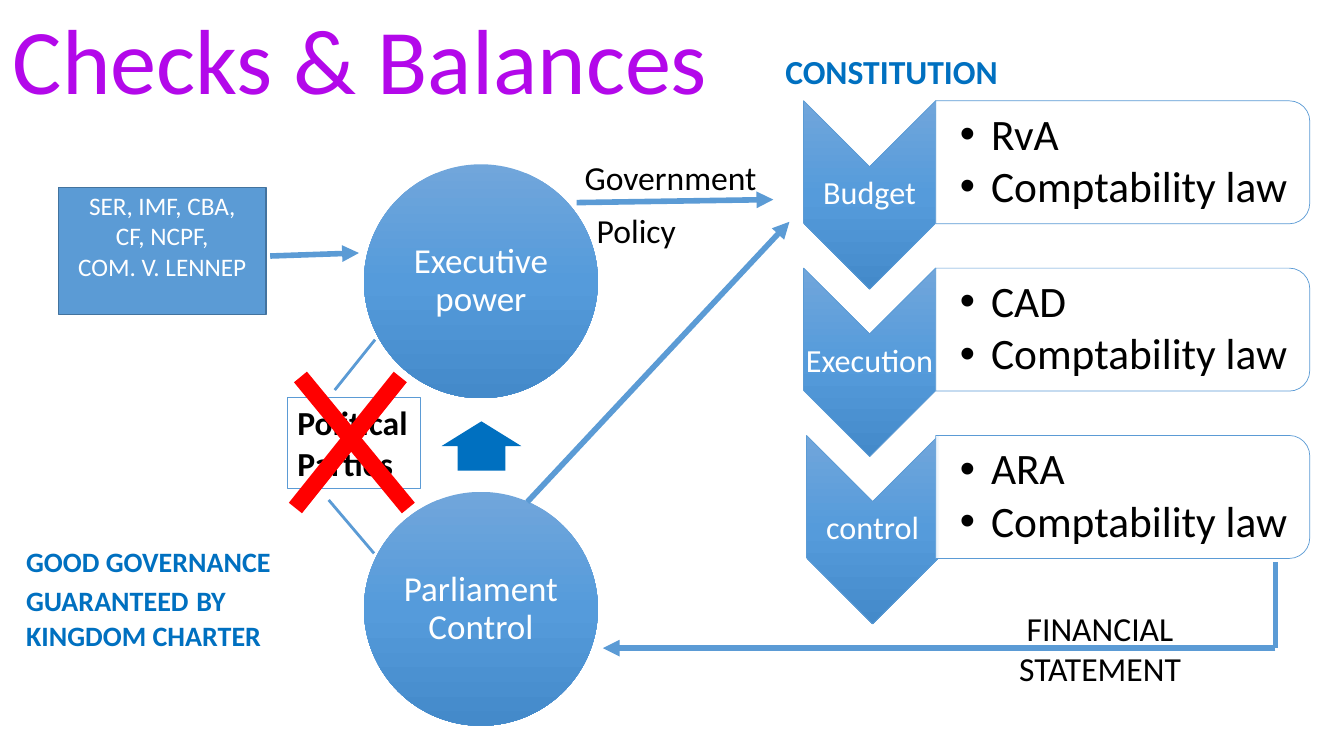
from copy import deepcopy
from dataclasses import dataclass
from typing import NamedTuple

from lxml import etree
from pptx import Presentation
from pptx.dml.color import RGBColor
from pptx.enum.shapes import MSO_CONNECTOR as Link, MSO_SHAPE as Form
from pptx.enum.text import MSO_ANCHOR as Anchor, PP_ALIGN as Align
from pptx.oxml.ns import qn
from pptx.util import Pt

SCALE = 9144  # EMU per px, 100 px to the inch


@dataclass(frozen=True)
class Theme:
    font: str = "Calibri"
    purple: str = "B308EA"
    blue: str = "5B9BD5"
    edge: str = "43739E"
    strong: str = "0070C0"
    red: str = "FF0000"
    white: str = "FFFFFF"
    black: str = "000000"
    gradient: tuple = ("71A6DB", "559BDB", "448ACA")
    title: int = 66
    bullet: int = 31
    power: int = 25
    label: int = 24
    stage: int = 23
    charter: int = 20
    advice: int = 18


THEME = Theme()


class Box(NamedTuple):
    left: int
    top: int
    width: int
    height: int

    def inner(self, x, y, width, height):
        return Box(self.left + x, self.top + y, width, height)

    def emu(self):
        return [round(value * SCALE) for value in self]


def write(shape, lines, size, color, bold=False, align=Align.LEFT,
          anchor=Anchor.TOP, insets=(10, 5, 10, 5), spacing=None):
    """Each line is a string or a list of (text, size) runs."""
    frame = shape.text_frame
    frame.word_wrap = True
    frame.vertical_anchor = anchor
    (frame.margin_left, frame.margin_top,
     frame.margin_right, frame.margin_bottom) = [inset * SCALE for inset in insets]
    for index, line in enumerate(lines):
        para = frame.paragraphs[0] if index == 0 else frame.add_paragraph()
        para.alignment = align
        if spacing:
            para.line_spacing = spacing
        for text, points in [(line, size)] if isinstance(line, str) else line:
            span = para.add_run()
            span.text = text
            span.font.name = THEME.font
            span.font.size = Pt(points)
            span.font.bold = bold
            span.font.color.rgb = RGBColor.from_string(color)
    return frame


def add_text(page, box, lines, size, color, **style):
    return write(page.shapes.add_textbox(*box.emu()), lines, size, color, **style)


def add_form(page, form, box, fill=None, line=None, weight=1, turned=False):
    """Place a shape so that it fills the box, even when turned by 90 degrees."""
    if turned:
        shift = (box.width - box.height) / 2
        box = Box(box.left + shift, box.top - shift, box.height, box.width)
    shape = page.shapes.add_shape(form, *box.emu())
    shape.rotation = 90 if turned else 0
    shape.shadow.inherit = False
    if fill:
        shape.fill.solid()
        shape.fill.fore_color.rgb = RGBColor.from_string(fill)
    else:
        shape.fill.background()
    if line:
        shape.line.color.rgb = RGBColor.from_string(line)
        shape.line.width = Pt(weight)
    else:
        shape.line.fill.background()
    return shape


def shade(shape):
    """Three-stop gradient running straight down the page."""
    shape.fill.gradient()
    shape.fill.gradient_angle = 270
    first = shape._element.spPr.find(".//" + qn("a:gs"))
    first.addnext(deepcopy(first))
    for stop, position, color in zip(shape.fill.gradient_stops, (0, 0.5, 1), THEME.gradient):
        stop.position = position
        stop.color.rgb = RGBColor.from_string(color)
    shape._element.spPr.find(qn("a:gradFill")).set("rotWithShape", "0")


def add_line(page, box, start, end, color=THEME.blue, weight=4, arrow=False):
    points = [(box.left + x, box.top + y) for x, y in (start, end)]
    line = page.shapes.add_connector(
        Link.STRAIGHT, *[value * SCALE for point in points for value in point])
    line.line.color.rgb = RGBColor.from_string(color)
    line.line.width = Pt(weight)
    if arrow:
        etree.SubElement(line.get_or_add_ln(), qn("a:tailEnd"), type="triangle")
    etree.SubElement(line._element.spPr, qn("a:effectLst"))


def add_stage(page, box, name, duties, shift=0):
    """Chevron with its step name, and a panel of bullets beside it."""
    chevron = add_form(page, Form.CHEVRON, box.inner(shift, 0, 131, 187),
                       line=THEME.blue, weight=0.5, turned=True)
    shade(chevron)
    add_text(page, box.inner(shift, 65, 131, 56), [name], THEME.stage, THEME.white,
             align=Align.CENTER, anchor=Anchor.MIDDLE, insets=(2, 2, 2, 2), spacing=0.9)
    panel = add_form(page, Form.ROUND_2_SAME_RECTANGLE, box.inner(131, 0, 371, 122),
                     THEME.white, THEME.blue, 0.5, turned=True)
    color = panel._element.spPr.find(qn("a:solidFill"))[0]
    etree.SubElement(color, qn("a:alpha"), val="90000")
    frame = add_text(page, box.inner(131, 6, 365, 110), duties, THEME.bullet, THEME.black,
                     anchor=Anchor.MIDDLE, insets=(24, 2, 2, 2), spacing=0.9)
    for index, para in enumerate(frame.paragraphs):
        if index:
            para.space_before = Pt(4)
        marks = para._p.get_or_add_pPr()
        marks.set("marL", str(31 * SCALE))
        marks.set("indent", str(-31 * SCALE))
        etree.SubElement(marks, qn("a:buFont"), typeface="Arial")
        etree.SubElement(marks, qn("a:buChar"), char="•")


def add_stages(page, box):
    law = "Comptability law"
    stages = (("Budget", "RvA", 0), ("Execution", "CAD", 0), ("control", "ARA", 3))
    for row, (name, body, shift) in enumerate(stages):
        add_stage(page, box.inner(0, row * 166, box.width, 187), name, [body, law], shift)


def add_powers(page, box):
    """Two powers, with the arrow that leads up from one to the other."""
    for top, name in ((325, "Parliament Control"), (0, "Executive power")):
        circle = add_form(page, Form.OVAL, box.inner(0, top, 232, 232))
        shade(circle)
        write(circle, [name], THEME.power, THEME.white, align=Align.CENTER,
              anchor=Anchor.MIDDLE, insets=(3, 3, 3, 3), spacing=0.9)
    arrow = add_form(page, Form.UP_ARROW, box.inner(77, 255, 79, 49), THEME.strong)
    arrow.adjustments[0], arrow.adjustments[1] = 0.6, 0.5


def add_policy(page, box):
    """Arrows from both powers to the budget."""
    add_line(page, box, (0, 347), (260, 69), arrow=True)
    add_line(page, box, (49, 50), (244, 47), arrow=True)
    for place, word in ((box.inner(47, 0, 200, 50), "Government"),
                        (box.inner(59, 52, 104, 50), "Policy")):
        add_text(page, place, [word], THEME.label, THEME.black)


def add_statement(page, box):
    """Return line from control to parliament."""
    add_line(page, box, (667, 0), (667, 85))
    add_line(page, box, (667, 85), (0, 85), arrow=True)
    add_text(page, box.inner(359, 40, 268, 91), ["FINANCIAL STATEMENT"],
             THEME.label, THEME.black, align=Align.CENTER)


def add_parties(page, box):
    """Crossed-out parties between the two powers."""
    add_line(page, box, (87, 0), (47, 50), weight=2)
    add_line(page, box, (41, 159), (86, 212), weight=2)
    parties = add_form(page, Form.RECTANGLE, box.inner(0, 57, 132, 91),
                       line=THEME.blue, weight=0.75)
    write(parties, ["Political Parties"], THEME.label, THEME.black, bold=True)
    for start, end in (((13, 37), (120, 167)), ((112, 37), (8, 167))):
        add_line(page, box, start, end, THEME.red, 12)


def add_advisers(page, box):
    """Advisory bodies and their arrow to the executive."""
    advisers = add_form(page, Form.RECTANGLE, box.inner(0, 0, 206, 126),
                        THEME.blue, THEME.edge)
    write(advisers, ["SER, IMF, CBA,", "CF, NCPF,", "COM. V. LENNEP"], THEME.advice,
          THEME.white, align=Align.CENTER, insets=(10, 3, 10, 5))
    add_line(page, box, (210, 68), (298, 65), arrow=True)


def add_headings(page, box):
    """Title, constitution label and charter note."""
    add_text(page, box.inner(3, 9, 720, 110), ["Checks & Balances"], THEME.title,
             THEME.purple, anchor=Anchor.MIDDLE, spacing=0.9)
    add_text(page, box.inner(769, 46, 233, 50), ["CONSTITUTION"], THEME.label,
             THEME.strong, bold=True)
    guarantee = [("GUARANTEED", THEME.charter), (" ", THEME.label), ("BY", THEME.charter)]
    add_text(page, box.inner(16, 535, 319, 118),
             ["GOOD GOVERNANCE", guarantee, "KINGDOM CHARTER"],
             THEME.charter, THEME.strong, bold=True)


def main():
    deck = Presentation()
    deck.slide_width, deck.slide_height = 1333 * SCALE, 750 * SCALE
    page = deck.slides.add_slide(deck.slide_layouts[6])
    add_headings(page, Box(0, 0, 1333, 750))
    add_stages(page, Box(797, 100, 502, 519))
    add_powers(page, Box(361, 163, 232, 557))
    add_policy(page, Box(523, 151, 260, 347))
    add_statement(page, Box(598, 558, 667, 131))
    add_parties(page, Box(285, 337, 132, 212))
    add_advisers(page, Box(58, 186, 298, 126))
    deck.save("out.pptx")


if __name__ == "__main__":
    main()
